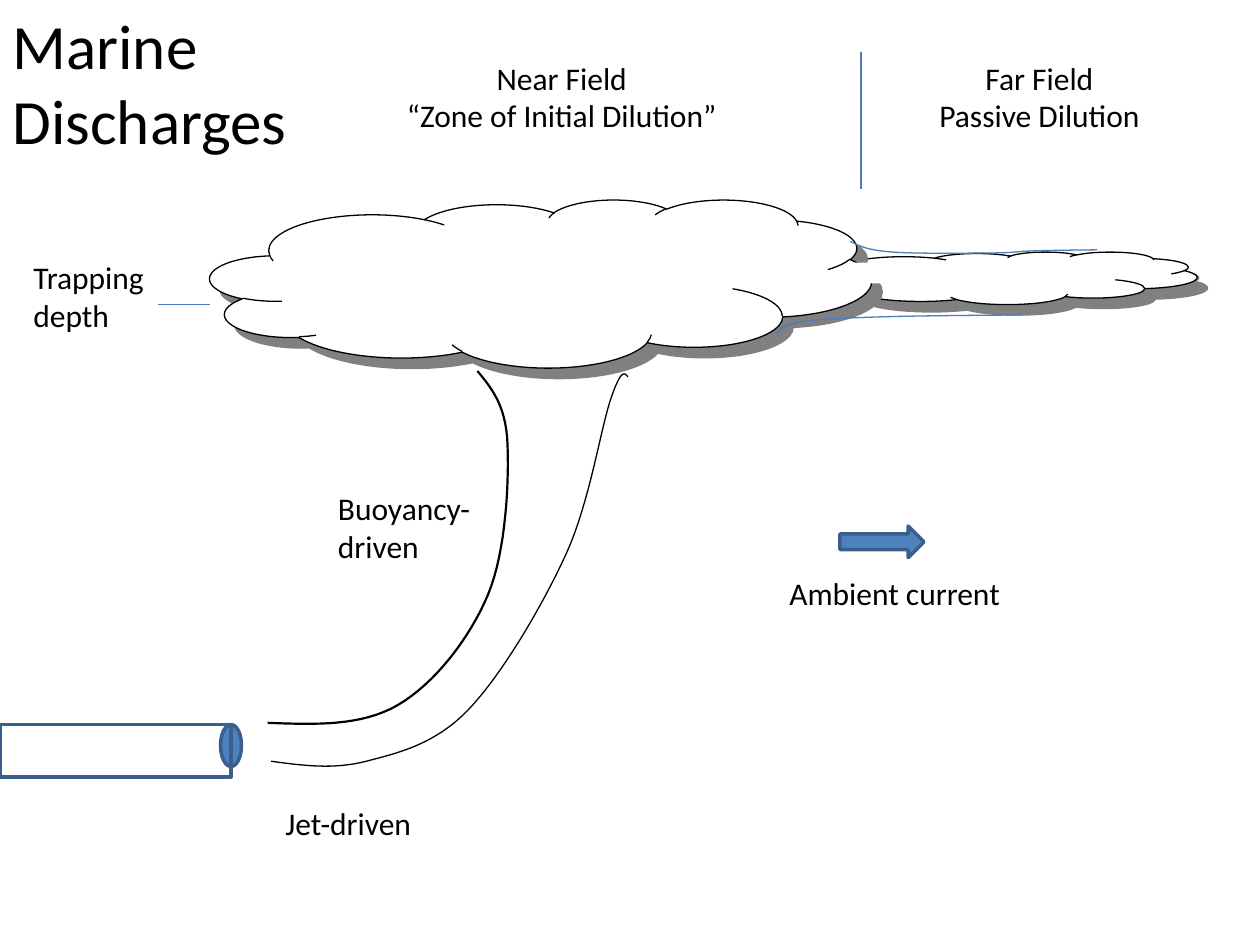
from pptx import Presentation
from pptx import util as u
from pptx.dml.color import RGBColor
from pptx.enum import shapes, text
from pptx.oxml import parse_xml
from pptx.oxml.ns import nsdecls, qn

CELL = u.Inches(1) // 12  # the slide is a grid of 120 columns by 90 rows
BLACK, WHITE, BLUE, EDGE, RULE = "000000", "FFFFFF", "4F81BD", "3A5F8C", "4B7EBC"
SHAPE = shapes.MSO_SHAPE
LEFT, CENTER = text.PP_ALIGN.LEFT, text.PP_ALIGN.CENTER


def grid(*cells):
    return [round(c * CELL) for c in cells]


def rgb(color):
    return RGBColor.from_string(color)


def style(sp, fill=None, line=None, width=0.75):
    sp.shadow.inherit = False
    if fill:
        sp.fill.solid()
        sp.fill.fore_color.rgb = rgb(fill)
    else:
        sp.fill.background()
    if line:
        sp.line.color.rgb = rgb(line)
        sp.line.width = u.Pt(width)
    else:
        sp.line.fill.background()
    return sp


def preset(s, kind, box, fill=None, line=None, width=0.75):
    return style(s.shapes.add_shape(kind, *grid(*box)), fill, line, width)


def cloud(s, box):
    """Add a white cloud with a hard grey shadow."""
    sp = preset(s, SHAPE.CLOUD, box, WHITE, BLACK)
    sp._element.spPr.find(qn("a:effectLst")).append(parse_xml(
        f'<a:outerShdw {nsdecls("a")} dist="{u.Pt(8.5)}" dir="2700000" algn="ctr" '
        'rotWithShape="0"><a:srgbClr val="808080"/></a:outerShdw>'))


def smooth(knots, steps=16):
    """Return points of a cubic spline that passes through all knots."""
    def mix(a, b, k):
        return tuple(p + (q - p) * k for p, q in zip(a, b))

    def control(i, side):
        step = [(b - a) / 6 * side for a, b in zip(knots[i - 1], knots[i + 1])]
        return tuple(p + d for p, d in zip(knots[i], step))

    points, last = [knots[0]], len(knots) - 2
    for i, (a, d) in enumerate(zip(knots, knots[1:])):
        b = control(i, 1) if i > 0 else mix(a, control(1, -1), 0.5)
        c = control(i + 1, -1) if i < last else mix(d, b, 0.5)
        for n in range(1, steps + 1):
            t = n / steps
            ab, bc, cd = mix(a, b, t), mix(b, c, t), mix(c, d, t)
            points.append(mix(mix(ab, bc, t), mix(bc, cd, t), t))
    return points


def curve(s, x, y, knots, color, width=0.75):
    points = [tuple(grid(x + px, y + py)) for px, py in smooth(knots)]
    fb = s.shapes.build_freeform(*points[0])
    fb.add_line_segments(points[1:], close=False)
    return style(fb.convert_to_shape(), None, color, width)


def rule(s, x1, y1, x2, y2):
    c = s.shapes.add_connector(shapes.MSO_CONNECTOR.STRAIGHT, *grid(x1, y1, x2, y2))
    c.line.color.rgb = rgb(RULE)
    c.line.width = u.Pt(0.75)
    c._element.spPr.append(parse_xml(f'<a:effectLst {nsdecls("a")}/>'))


def write(sp, lines, size, align):
    tf = sp.text_frame
    tf.word_wrap = True
    tf.auto_size = text.MSO_AUTO_SIZE.SHAPE_TO_FIT_TEXT
    tf.vertical_anchor = text.MSO_ANCHOR.TOP
    for i, line in enumerate(lines):
        p = tf.add_paragraph() if i else tf.paragraphs[0]
        p.alignment = align
        r = p.add_run()
        r.text = line
        r.font.name, r.font.size = "Calibri", u.Pt(size)
        r.font.color.rgb = rgb(BLACK)


def label(s, box, *lines, align=LEFT):
    write(s.shapes.add_textbox(*grid(*box)), lines, 18, align)


def title(s, box):
    sp = s.shapes.title
    sp.left, sp.top, sp.width, sp.height = grid(*box)
    write(sp, ["Marine", "Discharges"], 36, LEFT)


def outfall_pipe(s, x, y):
    preset(s, SHAPE.OVAL, (x + 21, y, 2, 4), BLUE, EDGE, 2)
    preset(s, SHAPE.RECTANGLE, (x, y, 22, 5), None, EDGE, 2)


def rising_plume(s, x, y):
    upper = [(0.2, 32.9), (12.7, 32.2), (22.1, 22.4), (25.1, 8.1), (22.8, 1.1)]
    lower = [(1.8, 37.5), (10.9, 37.5), (20.6, 32.6), (29.9, 17.8),
             (34.2, 2.9), (35.8, 0.9)]
    curve(s, x, y, upper, BLACK, 1.25).rotation = -4.6
    curve(s, x, y, lower, BLACK)
    label(s, (x + 7, y + 11, 16, 8.5), "Buoyancy-driven")
    label(s, (x + 2, y + 41, 16, 5), "Jet-driven")


def trapped_field(s, x, y):
    """Near-field cloud that drifts into the thin far-field cloud."""
    cloud(s, (x + 57, y + 5, 37, 5))
    cloud(s, (x, y, 63, 16))
    preset(s, SHAPE.RECTANGLE, (x + 61, y + 6, 4, 2), WHITE)
    top = [(61, 4), (64.8, 5), (74.4, 5.1), (78.5, 4.9), (84.5, 4.8)]
    bottom = [(54, 12.9), (56, 11.7), (63.4, 11.2), (77.4, 11)]
    for edge in (top, bottom):
        curve(s, x, y, edge, RULE)
    label(s, (x - 18, y + 5, 16, 8.5), "Trapping depth")
    rule(s, x - 5, y + 10, x, y + 10)


def zone_headings(s, x, y):
    label(s, (x, y, 33, 8.5), "Near Field", "“Zone of Initial Dilution”", align=CENTER)
    label(s, (x + 50, y, 24, 8.5), "Far Field", "Passive Dilution", align=CENTER)
    rule(s, x + 45, y + 13, x + 45, y)


def ambient_current(s, x, y):
    preset(s, SHAPE.RIGHT_ARROW, (x + 6, y, 8, 3), BLUE, EDGE, 2)
    label(s, (x, y + 4, 23, 4.8), "Ambient current")


def main():
    prs = Presentation()
    prs.slide_width, prs.slide_height = grid(120, 90)
    s = prs.slides.add_slide(prs.slide_layouts[5])
    title(s, (0, 0, 41, 15.7))
    rising_plume(s, 24, 35)
    trapped_field(s, 20, 19)
    outfall_pipe(s, 0, 69)
    zone_headings(s, 37, 5)
    ambient_current(s, 74, 50.1)
    prs.save("out.pptx")


if __name__ == "__main__":
    main()
